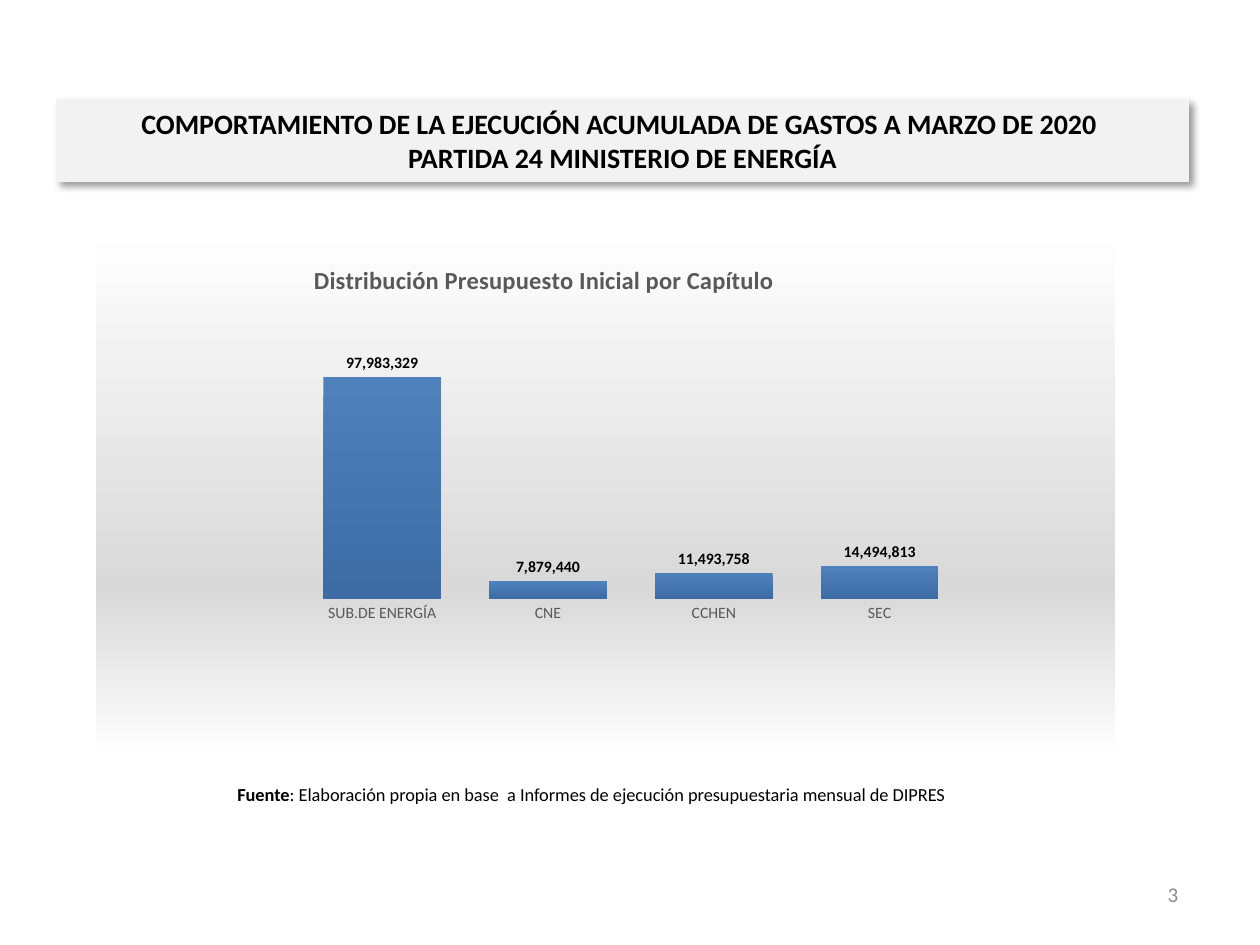
from pptx import Presentation
from pptx.chart.data import CategoryChartData
from pptx.dml.color import RGBColor
from pptx.enum.chart import XL_CHART_TYPE as ChartType, XL_LABEL_POSITION as LabelPosition
from pptx.enum.chart import XL_TICK_MARK as TickMark
from pptx.enum.text import MSO_ANCHOR as Anchor, PP_ALIGN as Align
from pptx.oxml import parse_xml
from pptx.oxml.ns import nsdecls
from pptx.util import Inches, Pt


def style(font, size, color, bold=False):
    font.name, font.size, font.bold = "Calibri", Pt(size), bold
    font.color.rgb = RGBColor.from_string(color)


def gradient(stops):
    """Vertical gradient fill from (percent, colour) stops."""
    stop_xml = "".join(f'<a:gs pos="{percent * 1000}"><a:srgbClr val="{color}"/></a:gs>'
                       for percent, color in stops)
    return (f'<a:gradFill {nsdecls("a")}><a:gsLst>{stop_xml}</a:gsLst>'
            '<a:lin ang="5400000" scaled="0"/></a:gradFill>')


deck = Presentation()
deck.slide_width, deck.slide_height = Inches(10), Inches(7.5)
page = deck.slides.add_slide(deck.slide_layouts[5])

# Title band with a soft shadow
title = page.shapes.title
title.left, title.top, title.width, title.height = map(Inches, (0.45, 0.79, 8.98, 0.65))
title.fill.solid()
title.fill.fore_color.rgb = RGBColor.from_string("F2F2F2")
title.line.color.rgb = RGBColor.from_string("F2F2F2")
title.line.width = Pt(0.75)
title._element.spPr.append(parse_xml(
    f'<a:effectLst {nsdecls("a")}><a:outerShdw blurRad="50800" dist="38100" dir="2700000" '
    'algn="tl" rotWithShape="0"><a:srgbClr val="000000"><a:alpha val="40000"/></a:srgbClr>'
    '</a:outerShdw></a:effectLst>'))
title.text_frame.text = ("COMPORTAMIENTO DE LA EJECUCIÓN ACUMULADA DE GASTOS A MARZO DE 2020 \v"
                         "PARTIDA 24 MINISTERIO DE ENERGÍA")
title.text_frame.vertical_anchor = Anchor.MIDDLE
para = title.text_frame.paragraphs[0]
para.alignment = Align.CENTER
style(para.font, 16, "000000", True)

# Budget chart
data = CategoryChartData(number_format="#,##0")
data.categories = ["SUB.DE ENERGÍA", "CNE", "CCHEN", "SEC"]
data.add_series("Series 1", (97983329, 7879440, 11493758, 14494813))
chart = page.shapes.add_chart(ChartType.COLUMN_CLUSTERED, Inches(0.75), Inches(1.79),
                              Inches(8.11), Inches(4.24), data).chart
style(chart.font, 10, "000000")
chart.has_legend = False
chart.has_title = True
chart.chart_title.text_frame.text = "Distribución Presupuesto Inicial por Capítulo"
style(chart.chart_title.text_frame.paragraphs[0].font, 14, "595959", True)

# Axes
category_axis, value_axis = chart.category_axis, chart.value_axis
category_axis.major_tick_mark = TickMark.NONE
category_axis.format.line.fill.background()
style(category_axis.tick_labels.font, 9, "595959")
value_axis.minimum_scale, value_axis.maximum_scale = 0, 120_000_000
value_axis.has_major_gridlines = False
value_axis.visible = False

# Columns and their labels
plot = chart.plots[0]
plot.gap_width = 41
plot.vary_by_categories = False
plot.series[0]._element.get_or_add_spPr().append(
    parse_xml(gradient([(0, "4F81BD"), (100, "3D6CA4")])))
plot.has_data_labels = True
labels = plot.data_labels
labels.show_value = True
labels.position = LabelPosition.OUTSIDE_END
labels.number_format, labels.number_format_is_linked = "#,##0", False
style(labels.font, 9, "000000", True)

# Chart background, placed right after the chart element
chart_xml = chart._chartSpace.chart
chart_xml.addnext(parse_xml(
    f'<c:spPr {nsdecls("c", "a")}>{gradient([(0, "FFFFFF"), (68, "D9D9D9"), (100, "FFFFFF")])}'
    '<a:ln w="9525"><a:solidFill><a:srgbClr val="FFFFFF"/></a:solidFill></a:ln></c:spPr>'))

# Fixed positions of the chart title and the plot area
for parent, after, settings in (
        (chart_xml.find("{*}title"), "{*}tx", {"x": 0.21, "y": 0.06}),
        (chart_xml.plotArea, None, {"x": 0.2, "y": 0.19, "w": 0.65, "h": 0.51})):
    for old in parent.findall("{*}layout"):
        parent.remove(old)
    modes = '<c:layoutTarget val="inner"/>' if "w" in settings else ""
    modes += '<c:xMode val="edge"/><c:yMode val="edge"/>'
    values = "".join(f'<c:{key} val="{value}"/>' for key, value in settings.items())
    layout = parse_xml(f'<c:layout {nsdecls("c")}><c:manualLayout>{modes}{values}'
                       '</c:manualLayout></c:layout>')
    if after:
        parent.find(after).addnext(layout)
    else:
        parent.insert(0, layout)

# Source note and page number
for place, parts, size, color, alignment in (
        ((0.98, 6.1, 7.43, 0.4),
         [("Fuente", True),
          (": Elaboración propia en base  a Informes de ejecución presupuestaria mensual de DIPRES",
           False)], 10.5, "000000", Align.CENTER),
        ((7.12, 6.9, 2.33, 0.4), [("3", False)], 12, "8C8C8C", Align.RIGHT)):
    box = page.shapes.add_textbox(*map(Inches, place))
    box.text_frame.word_wrap = True
    box.text_frame.vertical_anchor = Anchor.MIDDLE
    para = box.text_frame.paragraphs[0]
    para.alignment = alignment
    style(para.font, size, color)
    for text, bold in parts:
        span = para.add_run()
        span.text = text
        span.font.bold = bold

deck.save("out.pptx")
